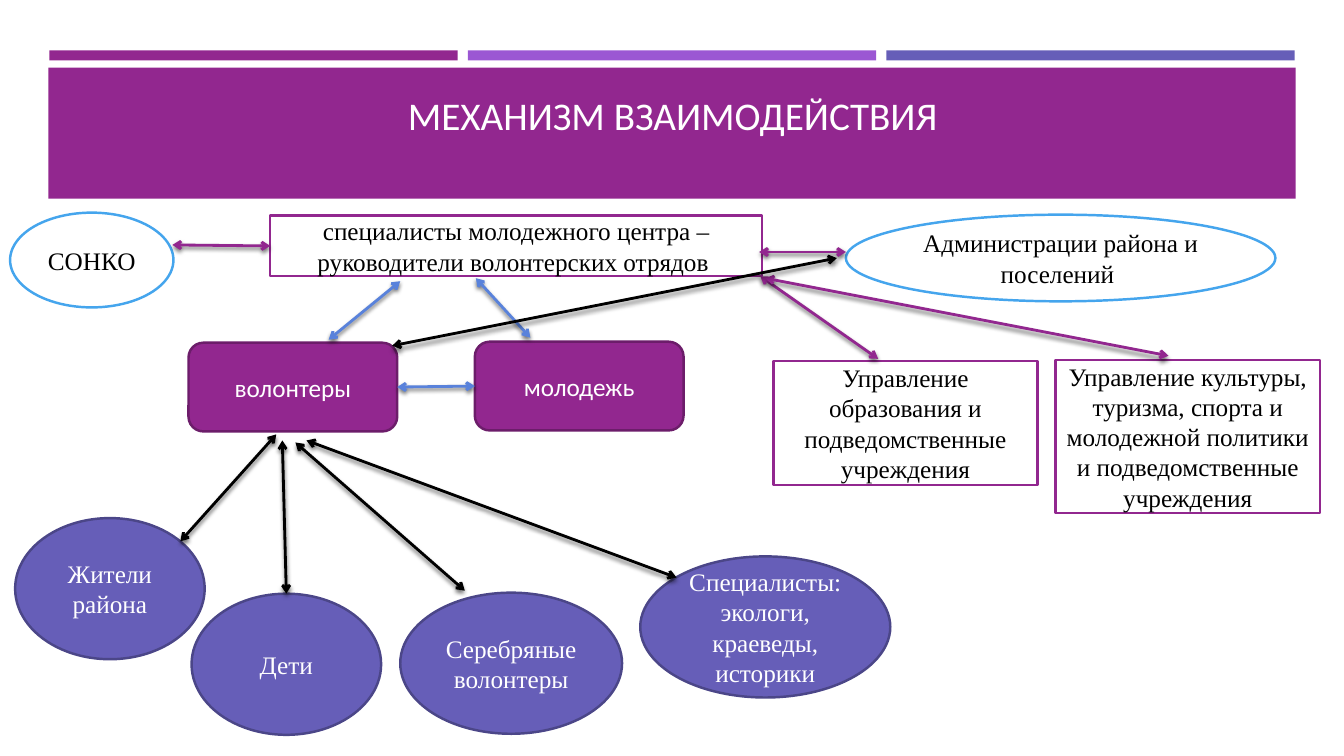
from lxml.etree import SubElement
from pptx import Presentation
from pptx.dml.color import RGBColor
from pptx.enum.shapes import MSO_CONNECTOR, MSO_SHAPE
from pptx.enum.text import MSO_ANCHOR, PP_ALIGN
from pptx.oxml import parse_xml
from pptx.oxml.ns import nsdecls, qn
from pptx.util import Inches, Pt

WHITE = RGBColor(0xFF, 0xFF, 0xFF)
BLACK = RGBColor(0x00, 0x00, 0x00)
PURPLE = RGBColor(0x92, 0x27, 0x8F)
DARK_PURPLE = RGBColor(0x6C, 0x1D, 0x6A)
VIOLET = RGBColor(0x9B, 0x57, 0xD3)
INDIGO = RGBColor(0x66, 0x5E, 0xB8)
DARK_INDIGO = RGBColor(0x4B, 0x46, 0x88)
SKY = RGBColor(0x45, 0xA5, 0xED)
BLUE = RGBColor(0x59, 0x82, 0xDB)

SERIF, SANS = "Times New Roman", "Calibri"
SHADOW = (
    f'<a:effectLst {nsdecls("a")}>'
    '<a:outerShdw blurRad="38100" dist="25400" dir="5400000" rotWithShape="0">'
    '<a:srgbClr val="000000"><a:alpha val="55000"/></a:srgbClr>'
    '</a:outerShdw></a:effectLst>'
)

deck = Presentation()
deck.slide_width, deck.slide_height = Inches(13.33), Inches(7.5)
slide = deck.slides.add_slide(deck.slide_layouts[5])


def add_block(kind, box, fill, outline=None):
    block = slide.shapes.add_shape(kind, *map(Inches, box))
    block.shadow.inherit = False
    block.fill.solid()
    block.fill.fore_color.rgb = fill
    if outline is None:
        block.line.fill.background()
    else:
        block.line.color.rgb = outline
        block.line.width = Pt(1.75)
    return block


def style_text(frame, font, size, color, anchor):
    frame.word_wrap = True
    frame.vertical_anchor = anchor
    paragraph = frame.paragraphs[0]
    paragraph.alignment = PP_ALIGN.CENTER
    for run in paragraph.runs:
        run.font.name = font
        run.font.size = Pt(size)
        run.font.color.rgb = color


# Three header strips above the title band
for column, strip_color in enumerate((PURPLE, VIOLET, INDIGO)):
    add_block(MSO_SHAPE.RECTANGLE, (0.49 + 4.15 * column, 0.5, 4.05, 0.1), strip_color)
add_block(MSO_SHAPE.RECTANGLE, (0.48, 0.67, 12.37, 1.3), PURPLE)

# Title, brought in front of its band
title = slide.shapes.title
title.left, title.top, title.width, title.height = map(Inches, (0.64, 0.77, 12.06, 0.65))
title.text_frame.text = "МЕХАНИЗМ ВЗАИМОДЕЙСТВИЯ"
style_text(title.text_frame, SANS, 28, WHITE, MSO_ANCHOR.BOTTOM)
slide.shapes._spTree.append(title._element)

# Participants: each style is shape, fill, outline, font, text colour
OFFICE = (MSO_SHAPE.RECTANGLE, WHITE, PURPLE, SERIF, BLACK)
PARTNER = (MSO_SHAPE.OVAL, WHITE, SKY, SERIF, BLACK)
YOUTH = (MSO_SHAPE.ROUNDED_RECTANGLE, PURPLE, DARK_PURPLE, SANS, WHITE)
AUDIENCE = (MSO_SHAPE.OVAL, INDIGO, DARK_INDIGO, SERIF, WHITE)

participants = [
    ("специалисты молодежного центра – руководители волонтерских отрядов ",
     OFFICE, (2.68, 2.14, 4.88, 0.6)),
    ("Администрации района и поселений ", PARTNER, (8.39, 2.13, 4.26, 0.86)),
    ("Управление образования и подведомственные учреждения",
     OFFICE, (7.67, 3.58, 2.62, 1.23)),
    ("СОНКО", PARTNER, (0.1, 2.11, 1.62, 0.94)),
    ("Управление культуры, туризма, спорта и молодежной политики "
     "и подведомственные учреждения", OFFICE, (10.47, 3.57, 2.62, 1.52)),
    ("волонтеры", YOUTH, (1.87, 3.4, 2.07, 0.88)),
    ("молодежь", YOUTH, (4.71, 3.39, 2.07, 0.88)),
    ("Жители района", AUDIENCE, (0.15, 5.14, 1.88, 1.4)),
    ("Дети", AUDIENCE, (1.9, 5.89, 1.88, 1.4)),
    ("Серебряные волонтеры", AUDIENCE, (3.97, 5.88, 2.2, 1.4)),
    ("Специалисты: экологи, краеведы, историки", AUDIENCE, (6.35, 5.52, 2.48, 1.4)),
]
for label, (kind, fill, outline, font, text_color), box in participants:
    participant = add_block(kind, box, fill, outline)
    participant.text_frame.text = label
    style_text(participant.text_frame, font, 18, text_color, MSO_ANCHOR.MIDDLE)

# Two-way arrows between the participants, grouped by colour
links = {
    PURPLE: [(7.54, 2.74, 8.71, 3.56), (7.59, 2.76, 11.59, 3.53),
             (7.53, 2.5, 8.39, 2.5), (1.71, 2.43, 2.68, 2.44)],
    BLUE: [(4.72, 2.76, 5.26, 3.35), (3.97, 2.79, 3.26, 3.37),
           (3.94, 3.84, 4.71, 3.83)],
    BLACK: [(3.89, 3.43, 8.3, 2.56), (1.79, 5.37, 2.74, 4.31),
            (2.84, 5.89, 2.8, 4.37), (4.61, 5.86, 2.93, 4.39),
            (6.71, 5.73, 3.04, 4.37)],
}
for link_color, routes in links.items():
    for route in routes:
        link = slide.shapes.add_connector(MSO_CONNECTOR.STRAIGHT, *map(Inches, route))
        link.line.color.rgb = link_color
        link.line.width = Pt(2)
        for end in ("a:headEnd", "a:tailEnd"):
            SubElement(link.line._get_or_add_ln(), qn(end), type="arrow")
        link._element.spPr.append(parse_xml(SHADOW))

deck.save("out.pptx")
